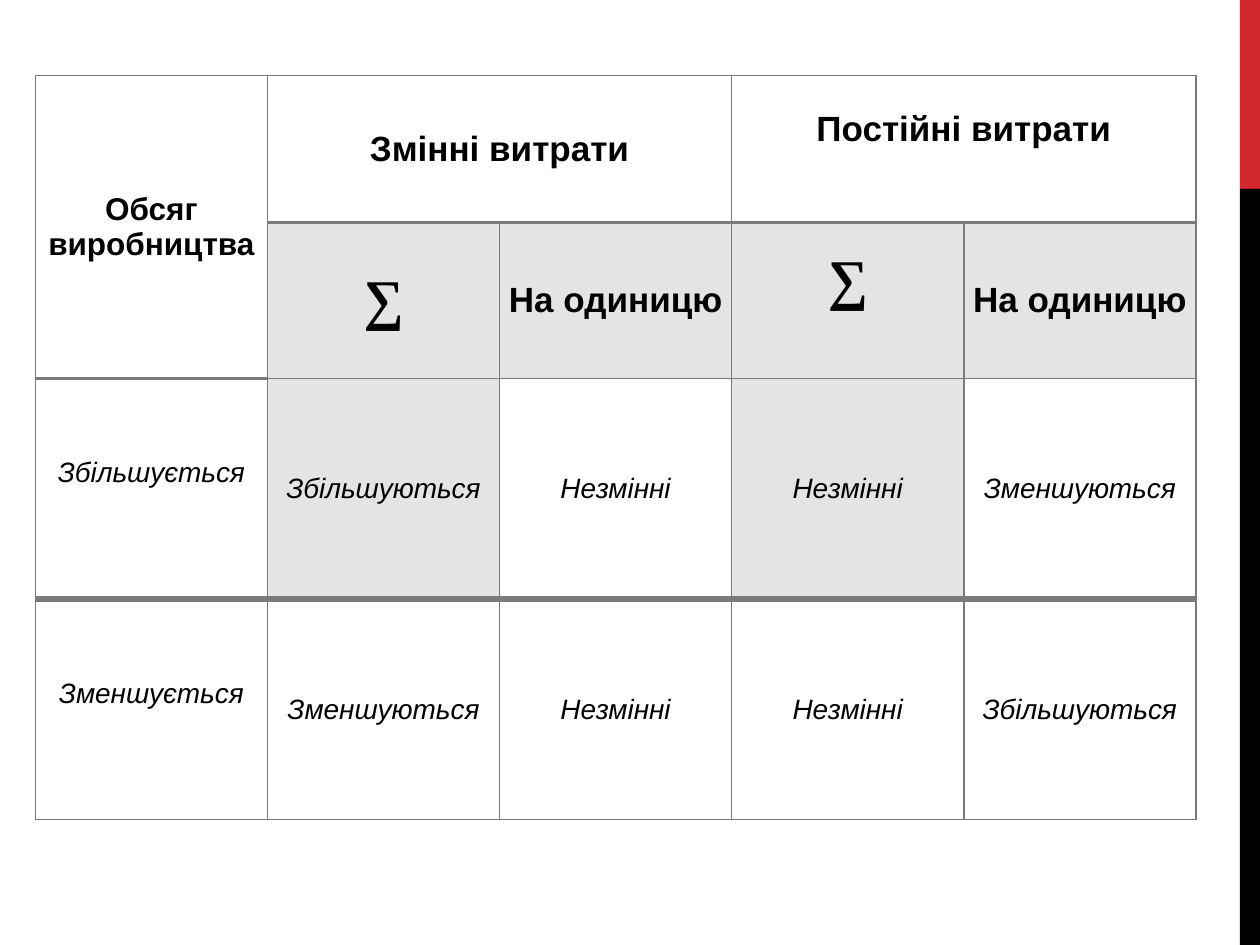
from lxml import etree
from pptx import Presentation
from pptx.dml.color import RGBColor
from pptx.enum.shapes import MSO_SHAPE
from pptx.enum.text import MSO_ANCHOR, PP_ALIGN
from pptx.oxml.ns import qn
from pptx.util import Pt

RECTANGLE = MSO_SHAPE.RECTANGLE
CENTER = PP_ALIGN.CENTER
MIDDLE = MSO_ANCHOR.MIDDLE

RED, BLACK, GRAY = "D1282E", "000000", "7A7A7A"
PAGE_WIDTH, PAGE_HEIGHT = 720, 540
BAR_LEFT, RED_HEIGHT = 708.5, 108
TABLE_LEFT, TABLE_TOP = 20.2, 43.2
COLUMN_WIDTH = 132.65
ROW_HEIGHTS = [84, 89.2, 126, 126]

ROWS = [
    ["Обсяг виробництва", "Змінні витрати", "", "Постійні витрати", ""],
    ["", "∑", "На одиницю", "∑", "На одиницю"],
    ["Збільшується", "Збільшуються", "Незмінні", "Незмінні", "Зменшуються"],
    ["Зменшується", "Зменшуються", "Незмінні", "Незмінні", "Збільшуються"],
]
MERGES = [((0, 0), (1, 0)), ((0, 1), (0, 2)), ((0, 3), (0, 4))]
SHADED = {(1, 1), (1, 2), (1, 3), (1, 4), (2, 1), (2, 3)}
# Bottom margins that lift the text above the middle of its cell
LIFTS = {(0, 3): 23, (1, 3): 23, (2, 0): 18, (3, 0): 18}


def color(value):
    return RGBColor.from_string(value)


def rule_width(line, column):
    """Width of the horizontal rule above row number `line`."""
    if line == 3:
        return 4
    if (line == 1 and column > 0) or (line == 2 and column == 0):
        return 2
    return 1


def text_style(row, column, text):
    """Font name, size, bold and italic of a cell."""
    if text == "∑":
        return "Times New Roman", 32, True, True
    if row >= 2:
        return "Arial", 16, False, True
    return "Arial", 18 if column == 0 else 20, True, False


class SlideBuilder:
    def __init__(self, page):
        self.page = page

    def bar(self, top, height, fill):
        bar = self.page.shapes.add_shape(
            RECTANGLE, Pt(BAR_LEFT), Pt(top), Pt(PAGE_WIDTH - BAR_LEFT), Pt(height))
        bar.shadow.inherit = False
        bar.fill.solid()
        bar.fill.fore_color.rgb = color(fill)
        bar.line.fill.background()

    def borders(self, cell, row, column):
        properties = cell._tc.get_or_add_tcPr()
        widths = {"a:lnL": 1, "a:lnR": 1,
                  "a:lnT": rule_width(row, column),
                  "a:lnB": rule_width(row + 1, column)}
        for side, width in widths.items():
            line = etree.SubElement(properties, qn(side), w=str(Pt(width)))
            fill = etree.SubElement(line, qn("a:solidFill"))
            etree.SubElement(fill, qn("a:srgbClr"), val=GRAY)

    def shade(self, cell, shaded):
        if not shaded:
            cell.fill.background()
            return
        cell.fill.solid()
        cell.fill.fore_color.rgb = color(GRAY)
        tint = cell._tc.tcPr.find(qn("a:solidFill")).find(qn("a:srgbClr"))
        etree.SubElement(tint, qn("a:alpha"), val="20000")

    def cell_text(self, cell, row, column, text):
        cell.vertical_anchor = MIDDLE
        cell.margin_left = cell.margin_right = Pt(5)
        cell.margin_top = 0
        cell.margin_bottom = Pt(LIFTS.get((row, column), 0))
        cell.text_frame.text = text
        name, size, bold, italic = text_style(row, column, text)
        for para in cell.text_frame.paragraphs:
            para.alignment = CENTER
            for span in para.runs:
                span.font.name = name
                span.font.size = Pt(size)
                span.font.bold = bold
                span.font.italic = italic
                span.font.color.rgb = color(BLACK)

    def table(self):
        column_count = len(ROWS[0])
        table = self.page.shapes.add_table(
            len(ROWS), column_count, Pt(TABLE_LEFT), Pt(TABLE_TOP),
            Pt(COLUMN_WIDTH * column_count), Pt(sum(ROW_HEIGHTS))).table
        table.first_row = table.horz_banding = False
        for column in table.columns:
            column.width = Pt(COLUMN_WIDTH)
        for row, height in zip(table.rows, ROW_HEIGHTS):
            row.height = Pt(height)
        for first, last in MERGES:
            table.cell(*first).merge(table.cell(*last))
        for row, texts in enumerate(ROWS):
            for column, text in enumerate(texts):
                cell = table.cell(row, column)
                self.borders(cell, row, column)
                self.shade(cell, (row, column) in SHADED)
                if text:
                    self.cell_text(cell, row, column, text)


def main():
    deck = Presentation()
    deck.slide_width, deck.slide_height = Pt(PAGE_WIDTH), Pt(PAGE_HEIGHT)
    builder = SlideBuilder(deck.slides.add_slide(deck.slide_layouts[6]))

    # Bars on the right edge
    builder.bar(0, RED_HEIGHT, RED)
    builder.bar(RED_HEIGHT, PAGE_HEIGHT - RED_HEIGHT, BLACK)

    # Cost behaviour table
    builder.table()

    deck.save("out.pptx")


if __name__ == "__main__":
    main()
